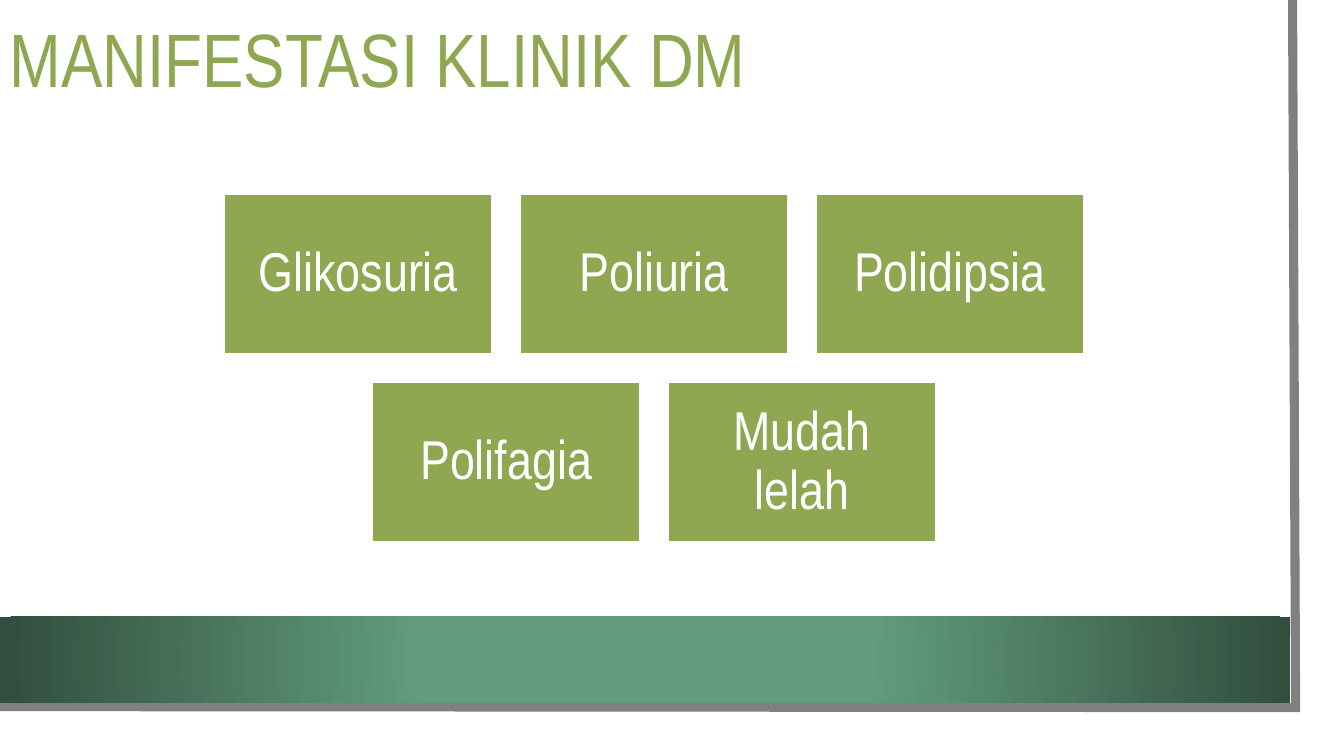
from dataclasses import dataclass

from lxml import etree
from pptx import Presentation
from pptx import util as u
from pptx.dml.color import RGBColor
from pptx.enum import shapes, text
from pptx.oxml.ns import qn


@dataclass(frozen=True)
class Theme:
    font: str = "Arial Narrow"
    green: str = "8FA751"
    white: str = "FFFFFF"
    edge: str = "808080"
    band_inner: str = "629D7D"
    band_outer: str = "314E3E"
    title_size: int = 54
    tile_size: int = 39
    edge_width: float = 6.5
    tile_line: float = 1.5


T = Theme()
W, H = 13.33, 7.5
ROWS = [["Glikosuria", "Poliuria", "Polidipsia"], ["Polifagia", "Mudah lelah"]]


def rgb(value):
    return RGBColor.from_string(value)


def add_rect(s, x, y, w, h, fill=None):
    sp = s.shapes.add_shape(shapes.MSO_SHAPE.RECTANGLE, *map(u.Inches, (x, y, w, h)))
    sp.shadow.inherit = False
    sp.line.fill.background()
    if fill:
        sp.fill.solid()
        sp.fill.fore_color.rgb = rgb(fill)
    return sp


def write(sp, content, size, color, align=text.PP_ALIGN.LEFT, inset=None):
    tf = sp.text_frame
    tf.word_wrap = True
    tf.vertical_anchor = text.MSO_ANCHOR.MIDDLE
    if inset is not None:
        tf.margin_left = tf.margin_right = u.Inches(inset)
        tf.margin_top = tf.margin_bottom = u.Inches(inset)
    p = tf.paragraphs[0]
    p.alignment = align
    p.line_spacing = 0.9
    r = p.add_run()
    r.text = content
    r.font.name = T.font
    r.font.size = u.Pt(size)
    r.font.color.rgb = rgb(color)


def add_band(s, x, y, w, h):
    sp = add_rect(s, x, y, w, h)
    sp.fill.gradient()
    stops = [(0.34, T.band_inner), (1, T.band_outer)]
    for stop, (position, color) in zip(sp.fill.gradient_stops, stops):
        stop.position = position
        stop.color.rgb = rgb(color)
    grad = sp._element.spPr.find(qn("a:gradFill"))
    grad.remove(grad.find(qn("a:lin")))
    circle = etree.SubElement(grad, qn("a:path"), {"path": "circle"})
    etree.SubElement(circle, qn("a:fillToRect"), dict.fromkeys("ltrb", "50000"))


def add_page(s, x, y, w, h):
    add_rect(s, x, y, w, h, T.white)
    right, bottom = x + w - 0.25, y + h - 0.25
    fb = s.shapes.build_freeform(u.Inches(right - 0.03), u.Inches(y), scale=1.0)
    corners = [(right, bottom), (x - 0.03, bottom - 0.01)]
    fb.add_line_segments([(u.Inches(a), u.Inches(b)) for a, b in corners], close=False)
    sp = fb.convert_to_shape()
    sp.shadow.inherit = False
    sp.fill.background()
    sp.line.color.rgb = rgb(T.edge)
    sp.line.width = u.Pt(T.edge_width)
    etree.SubElement(sp.line._get_or_add_ln(), qn("a:miter"), {"lim": "800000"})
    add_band(s, x, bottom - 0.9, w - 0.3, 0.85)


def add_title(s, x, y, w, h, content):
    sp = s.shapes.add_textbox(*map(u.Inches, (x, y, w, h)))
    write(sp, content, T.title_size, T.green)


def add_tiles(s, x, y, w, h, rows, gap=0.27):
    columns = max(map(len, rows))
    tile_w = (w - gap * (columns - 1)) / columns
    tile_h = (h - gap * (len(rows) - 1)) / len(rows)
    for i, row in enumerate(rows):
        left = x + (columns - len(row)) * (tile_w + gap) / 2
        for j, label in enumerate(row):
            sp = add_rect(s, left + j * (tile_w + gap), y + i * (tile_h + gap),
                          tile_w, tile_h, T.green)
            sp.line.color.rgb = rgb(T.white)
            sp.line.width = u.Pt(T.tile_line)
            write(sp, label, T.tile_size, T.white, text.PP_ALIGN.CENTER, 0.16)


def main():
    prs = Presentation()
    prs.slide_width, prs.slide_height = u.Inches(W), u.Inches(H)
    s = prs.slides.add_slide(prs.slide_layouts[6])
    add_page(s, 0, 0, W - 0.23, H - 0.23)
    add_title(s, 0, 0, 11.37, 1.26, "MANIFESTASI KLINIK DM")
    add_tiles(s, W / 6, 1.92, W * 0.64, 3.46, ROWS)
    prs.save("out.pptx")


if __name__ == "__main__":
    main()
